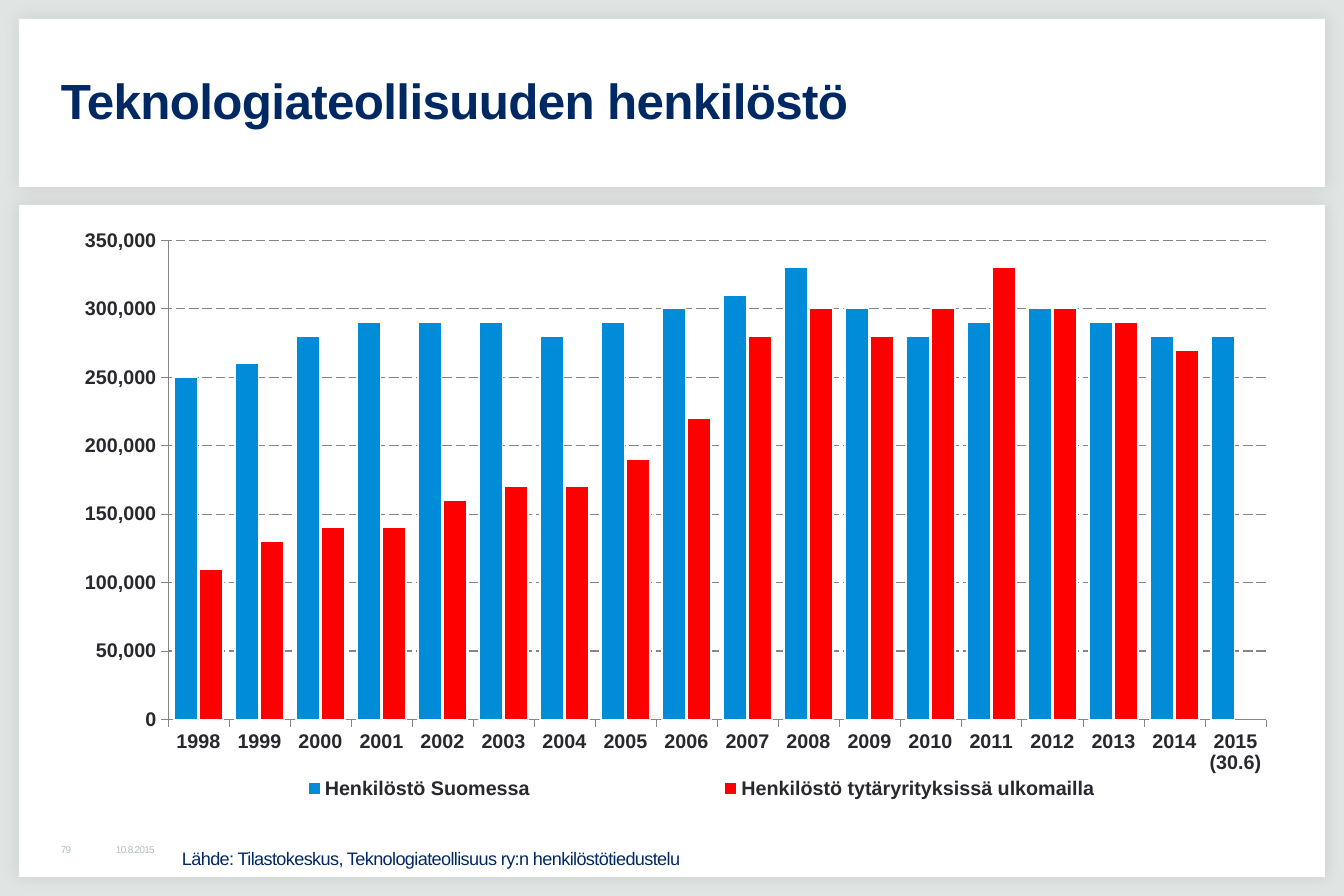
import pptx
import pptx.chart.data
import pptx.dml.color
import pptx.enum.chart
import pptx.enum.dml
import pptx.enum.shapes
import pptx.enum.text
import pptx.oxml
import pptx.oxml.ns
import pptx.util


def px(length):
    return round(length * 914400 / 118.5)


def color(value):
    return pptx.dml.color.RGBColor.from_string(value)


qn = pptx.oxml.ns.qn
deck = pptx.Presentation()
deck.slide_width, deck.slide_height = px(1344), px(896)
page = deck.slides.add_slide(deck.slide_layouts[5])
page.background.fill.solid()
page.background.fill.fore_color.rgb = color("E0E5E3")

# White panels with a soft shadow, behind the title
for top, height in ((19, 168), (205, 672)):
    panel = page.shapes.add_shape(
        pptx.enum.shapes.MSO_SHAPE.RECTANGLE, px(19), px(top), px(1306), px(height))
    panel.fill.solid()
    panel.fill.fore_color.rgb = color("FFFFFF")
    panel.line.fill.background()
    panel.shadow.inherit = False
    effects = panel._element.spPr.find(qn("a:effectLst"))
    effects.append(pptx.oxml.parse_xml(
        f'<a:outerShdw {pptx.oxml.ns.nsdecls("a")} blurRad="127000" dist="0" dir="2700000">'
        '<a:srgbClr val="000000"><a:alpha val="10000"/></a:srgbClr></a:outerShdw>'))
    page.shapes._spTree.insert(2, panel._element)

# Chart, with the staff in tens of thousands
chart_data = pptx.chart.data.CategoryChartData(number_format="#,##0")
chart_data.categories = [str(year) for year in range(1998, 2015)] + ["2015 (30.6)"]
staff = (
    ("Henkilöstö Suomessa", "008CD9",
     (25, 26, 28, 29, 29, 29, 28, 29, 30, 31, 33, 30, 28, 29, 30, 29, 28, 28)),
    ("Henkilöstö tytäryrityksissä ulkomailla", "FF0000",
     (11, 13, 14, 14, 16, 17, 17, 19, 22, 28, 30, 28, 30, 33, 30, 29, 27, None)),
)
for name, fill, counts in staff:
    chart_data.add_series(name, [count and count * 10000 for count in counts])
chart = page.shapes.add_chart(
    pptx.enum.chart.XL_CHART_TYPE.COLUMN_CLUSTERED,
    px(56), px(224), px(1231), px(588), chart_data).chart
chart.has_title = False
chart.has_legend = True
chart.legend.position = pptx.enum.chart.XL_LEGEND_POSITION.BOTTOM
chart.legend.include_in_layout = False
plot = chart.plots[0]
plot.gap_width, plot.overlap, plot.vary_by_categories = 50, -5, False
for series, (name, fill, counts) in zip(plot.series, staff):
    series.format.fill.solid()
    series.format.fill.fore_color.rgb = color(fill)
    series.format.line.color.rgb = color("FFFFFF")
    series.format.line.width = pptx.util.Pt(0.75)
    series.invert_if_negative = False

# Axes and gridlines
values, years = chart.value_axis, chart.category_axis
values.minimum_scale, values.maximum_scale, values.major_unit = 0, 350000, 50000
values.tick_labels.number_format = "#,##0"
values.tick_labels.number_format_is_linked = False
values.has_major_gridlines = True
grid = values.major_gridlines.format.line
grid.dash_style = pptx.enum.dml.MSO_LINE.LONG_DASH
for axis in (values, years):
    axis.major_tick_mark = pptx.enum.chart.XL_TICK_MARK.OUTSIDE
for line, width in ((grid, 0.75), (values.format.line, 0.5), (years.format.line, 0.5)):
    line.color.rgb = color("868686")
    line.width = pptx.util.Pt(width)
for font in (chart.font, values.tick_labels.font, years.tick_labels.font, chart.legend.font):
    for key, value in dict(name="Arial", size=pptx.util.Pt(12), bold=True).items():
        setattr(font, key, value)
    font.color.rgb = color("29282E")

# Fixed places for the plot and the legend
plot_area = chart._chartSpace.chart.plotArea
legend = chart.legend._element
for parent, index, target, (x, y, w, h) in (
        (plot_area, 0, '<c:layoutTarget val="inner"/>', (0.091, 0.028, 0.892, 0.815)),
        (legend, 1, "", (0.052, 0.93, 0.945, 0.06))):
    for old in parent.findall(qn("c:layout")):
        parent.remove(old)
    parent.insert(index, pptx.oxml.parse_xml(
        f'<c:layout {pptx.oxml.ns.nsdecls("c")}><c:manualLayout>{target}'
        '<c:xMode val="edge"/><c:yMode val="edge"/>'
        f'<c:x val="{x}"/><c:y val="{y}"/><c:w val="{w}"/><c:h val="{h}"/>'
        '</c:manualLayout></c:layout>'))

# Title, date, page number and source
middle, top_anchor = pptx.enum.text.MSO_ANCHOR.MIDDLE, pptx.enum.text.MSO_ANCHOR.TOP
fixed, grow = pptx.enum.text.MSO_AUTO_SIZE.NONE, pptx.enum.text.MSO_AUTO_SIZE.SHAPE_TO_FIT_TEXT
source = "Lähde: Tilastokeskus, Teknologiateollisuus ry:n henkilöstötiedustelu"
for text, place, margins, anchor, fit, size, bold, ink in (
        ("Teknologiateollisuuden henkilöstö", (56, 38, 1232, 130), (5, 6, 12, 6),
         middle, fixed, 30, True, "002964"),
        ("10.8.2015", (111, 840, 168, 19), (5, 5, 5, 5), middle, fixed, 6, False, "B1BEB9"),
        ("79", (56, 840, 56, 19), (5, 5, 5, 5), middle, fixed, 6, False, "B1BEB9"),
        (source, (177, 842, 672, 31), (5, 5, 5, 5), top_anchor, grow, 11, False, "002964")):
    if size == 30:
        box = page.shapes.title
        box.left, box.top, box.width, box.height = map(px, place)
    else:
        box = page.shapes.add_textbox(*map(px, place))
    frame = box.text_frame
    sides = ("margin_left", "margin_top", "margin_right", "margin_bottom")
    frame_format = dict(zip(sides, map(px, margins)))
    frame_format.update(word_wrap=True, auto_size=fit, vertical_anchor=anchor)
    for key, value in frame_format.items():
        setattr(frame, key, value)
    para = frame.paragraphs[0]
    para.alignment = pptx.enum.text.PP_ALIGN.LEFT
    if size == 30:
        para.line_spacing = 0.95
    span = para.add_run()
    span.text = text
    for key, value in dict(name="Arial", size=pptx.util.Pt(size), bold=bold).items():
        setattr(span.font, key, value)
    span.font.color.rgb = color(ink)
    span._r.get_or_add_rPr().set("spc", "-40")

deck.save("out.pptx")
